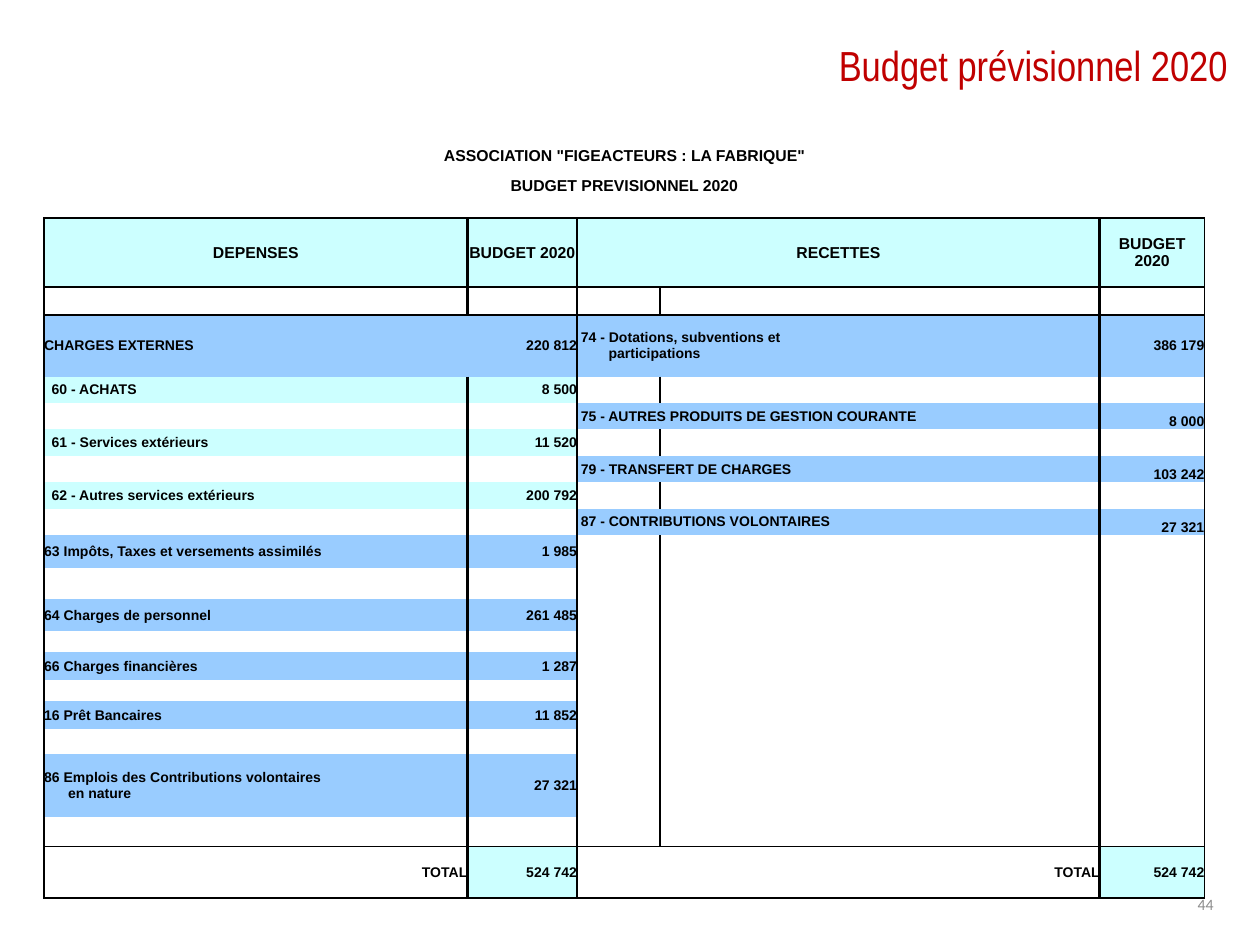
from dataclasses import dataclass
from typing import Optional

from lxml import etree
from pptx import Presentation
from pptx.dml.color import RGBColor
from pptx.enum.text import MSO_ANCHOR, PP_ALIGN
from pptx.oxml.ns import qn
from pptx.util import Inches, Pt

LEFT, CENTER, RIGHT = PP_ALIGN.LEFT, PP_ALIGN.CENTER, PP_ALIGN.RIGHT
MIDDLE, BOTTOM = MSO_ANCHOR.MIDDLE, MSO_ANCHOR.BOTTOM
BLACK, RED, GREY = "000000", "C00000", "8C8C8C"
AQUA, BLUE = "CCFFFF", "99CCFF"
PLAIN_STYLE = "{2D5ABB26-0587-4C30-8999-92F81FD0307C}"

COLUMN_WIDTHS = [3.36, 0.87, 0.66, 0.84, 0.74, 1.91, 0.83]
EXPENSE, EXPENSE_AMOUNT, REVENUE, REVENUE_END, REVENUE_AMOUNT = 0, 1, 2, 5, 6
HEADER_ROW, CHARGES_ROW = 3, 5
VERTICAL_RULES = {0: 1, 1: 2, 2: 1, 6: 2, 7: 1}


@dataclass(frozen=True)
class Entry:
    label: str
    amount: str
    fill: Optional[str] = BLUE
    amount_fill: str = BLUE
    inset: float = 0
    hang: float = 0
    size: float = 8
    label_align: PP_ALIGN = LEFT
    amount_align: PP_ALIGN = RIGHT
    amount_anchor: MSO_ANCHOR = MIDDLE


@dataclass(frozen=True)
class BudgetRow:
    height: float
    expense: Optional[Entry] = None
    revenue: Optional[Entry] = None


def purchase(label: str, amount: str) -> Entry:
    return Entry(label, amount, AQUA, AQUA, inset=0.06)


def income(label: str, amount: str) -> Entry:
    return Entry(label, amount, inset=0.03, amount_anchor=BOTTOM)


def heading(label: str) -> Entry:
    return Entry(label, "BUDGET 2020", AQUA, AQUA, size=9,
                 label_align=CENTER, amount_align=CENTER)


TOTAL = Entry("TOTAL", "524 742", None, AQUA, label_align=RIGHT)
ASSOCIATION_LINES = ['ASSOCIATION "FIGEACTEURS : LA FABRIQUE"', "BUDGET PREVISIONNEL 2020"]
BUDGET_ROWS = [
    BudgetRow(0.24),
    BudgetRow(0.24),
    BudgetRow(0.18),
    BudgetRow(0.55, heading("DEPENSES"), heading("RECETTES")),
    BudgetRow(0.22),
    BudgetRow(0.49, Entry("CHARGES EXTERNES", "220 812"),
              Entry("74 - Dotations, subventions et\nparticipations", "386 179",
                    inset=0.03, hang=0.22)),
    BudgetRow(0.21, purchase("60 - ACHATS", "8 500")),
    BudgetRow(0.21, None, income("75 - AUTRES PRODUITS DE GESTION COURANTE", "8 000")),
    BudgetRow(0.21, purchase("61 - Services extérieurs", "11 520")),
    BudgetRow(0.21, None, income("79 - TRANSFERT DE CHARGES", "103 242")),
    BudgetRow(0.21, purchase("62 - Autres services extérieurs", "200 792")),
    BudgetRow(0.21, None, income("87 - CONTRIBUTIONS VOLONTAIRES", "27 321")),
    BudgetRow(0.26, Entry("63 Impôts, Taxes et versements assimilés", "1 985")),
    BudgetRow(0.25),
    BudgetRow(0.25, Entry("64 Charges de personnel", "261 485")),
    BudgetRow(0.17),
    BudgetRow(0.22, Entry("66 Charges financières", "1 287")),
    BudgetRow(0.17),
    BudgetRow(0.22, Entry("16 Prêt Bancaires", "11 852")),
    BudgetRow(0.2),
    BudgetRow(0.5, Entry("86 Emplois des Contributions volontaires\nen nature", "27 321",
                         hang=0.19)),
    BudgetRow(0.23),
    BudgetRow(0.41, TOTAL, TOTAL),
]
HORIZONTAL_RULES = {HEADER_ROW, HEADER_ROW + 1, len(BUDGET_ROWS) - 1, len(BUDGET_ROWS)}


def rgb(value: str) -> RGBColor:
    return RGBColor.from_string(value)


def write(paragraph, text: str, size: float, font: str, color: str,
          align: PP_ALIGN, bold: bool = False) -> None:
    paragraph.alignment = align
    for number, line in enumerate(text.split("\n")):
        if number:
            paragraph.add_line_break()
        run = paragraph.add_run()
        run.text = line
        run.font.size = Pt(size)
        run.font.name = font
        run.font.bold = bold
        run.font.color.rgb = rgb(color)


def add_text(slide, box: tuple, text: str, size: float, font: str, color: str,
             line_spacing: float = 1) -> None:
    frame = slide.shapes.add_textbox(*map(Inches, box)).text_frame
    frame.word_wrap = True
    frame.vertical_anchor = MIDDLE
    frame.paragraphs[0].line_spacing = line_spacing
    write(frame.paragraphs[0], text, size, font, color, RIGHT)


def add_rule(cell, side: str, width: float) -> None:
    rule = etree.SubElement(cell._tc.get_or_add_tcPr(), qn(f"a:{side}"), w=str(Pt(width)))
    fill = etree.SubElement(rule, qn("a:solidFill"))
    etree.SubElement(fill, qn("a:srgbClr"), val=BLACK)


def vertical_rule(row: int, edge: int) -> float:
    if row < HEADER_ROW or (row == CHARGES_ROW and edge == EXPENSE_AMOUNT):
        return 0
    return VERTICAL_RULES.get(edge, 0)


def prepare_cell(cell, row: int, column: int) -> None:
    cell.margin_left = cell.margin_right = cell.margin_top = cell.margin_bottom = 0
    widths = {
        "lnL": vertical_rule(row, column),
        "lnR": vertical_rule(row, column + 1),
        "lnT": int(row in HORIZONTAL_RULES),
        "lnB": int(row + 1 in HORIZONTAL_RULES),
    }
    for side, width in widths.items():
        if width:
            add_rule(cell, side, width)
    cell.fill.background()
    etree.SubElement(cell.text_frame.paragraphs[0]._p, qn("a:endParaRPr"), sz="800")


def fill_cell(cell, text: str, size: float, align: PP_ALIGN, anchor: MSO_ANCHOR,
              fill: Optional[str] = None) -> None:
    cell.vertical_anchor = anchor
    if fill:
        cell.fill.solid()
        cell.fill.fore_color.rgb = rgb(fill)
    write(cell.text_frame.paragraphs[0], text, size, "Arial", BLACK, align, bold=True)


def fill_entry(label_cell, amount_cell, entry: Entry) -> None:
    fill_cell(label_cell, entry.label, entry.size, entry.label_align, MIDDLE, entry.fill)
    label_cell.margin_left = Inches(entry.inset)
    if entry.hang:
        properties = label_cell.text_frame.paragraphs[0]._p.get_or_add_pPr()
        properties.set("marL", str(Inches(entry.hang)))
        properties.set("indent", str(-Inches(entry.hang)))
    fill_cell(amount_cell, entry.amount, entry.size, entry.amount_align,
              entry.amount_anchor, entry.amount_fill)


def add_budget(slide) -> None:
    heights = [budget_row.height for budget_row in BUDGET_ROWS]
    budget = slide.shapes.add_table(
        len(heights), len(COLUMN_WIDTHS), Inches(0.35), Inches(1.07),
        Inches(sum(COLUMN_WIDTHS)), Inches(sum(heights))).table
    budget.first_row = budget.horz_banding = False
    budget._tbl.tblPr.find(qn("a:tableStyleId")).text = PLAIN_STYLE
    for column, width in enumerate(COLUMN_WIDTHS):
        budget.columns[column].width = Inches(width)
    for row, budget_row in enumerate(BUDGET_ROWS):
        budget.rows[row].height = Inches(budget_row.height)
        for column in range(len(COLUMN_WIDTHS)):
            prepare_cell(budget.cell(row, column), row, column)
        if budget_row.expense:
            fill_entry(budget.cell(row, EXPENSE), budget.cell(row, EXPENSE_AMOUNT),
                       budget_row.expense)
        if budget_row.revenue:
            budget.cell(row, REVENUE).merge(budget.cell(row, REVENUE_END))
            fill_entry(budget.cell(row, REVENUE), budget.cell(row, REVENUE_AMOUNT),
                       budget_row.revenue)
    for row, line in enumerate(ASSOCIATION_LINES):
        budget.cell(row, EXPENSE).merge(budget.cell(row, REVENUE_AMOUNT))
        fill_cell(budget.cell(row, EXPENSE), line, 9, CENTER, BOTTOM)
    budget.cell(2, EXPENSE).merge(budget.cell(2, REVENUE_END))


def main() -> None:
    deck = Presentation()
    deck.slide_width, deck.slide_height = Inches(10), Inches(7.5)
    slide = deck.slides.add_slide(deck.slide_layouts[6])
    add_text(slide, (1.22, 0.21, 8.62, 0.66), "Budget prévisionnel 2020", 24,
             "Arial Narrow", RED, line_spacing=0.9)
    add_budget(slide)
    add_text(slide, (8.98, 6.98, 0.75, 0.4), "44", 9, "Calibri", GREY)
    deck.save("out.pptx")


if __name__ == "__main__":
    main()
